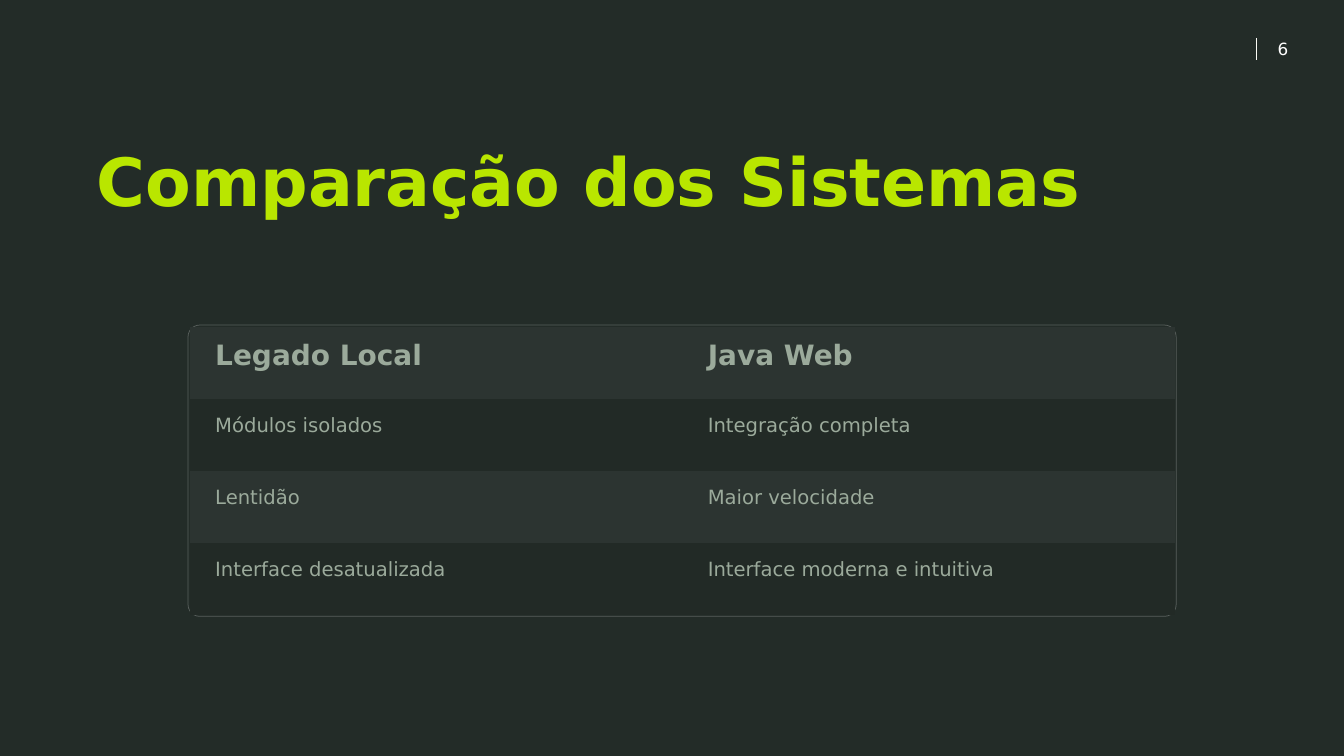
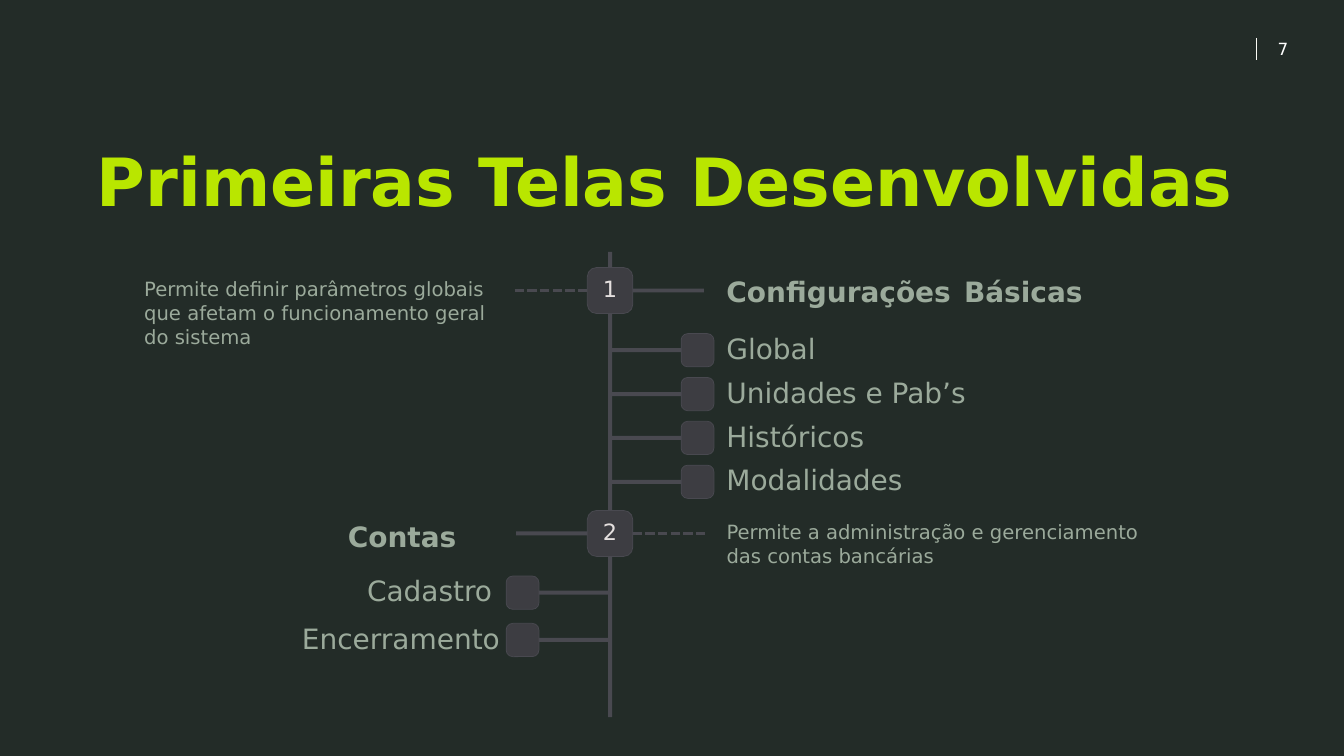
from dataclasses import dataclass

from lxml.etree import SubElement
from pptx import Presentation
from pptx.dml.color import RGBColor as Rgb
from pptx.enum.dml import MSO_LINE as Dash
from pptx.enum.shapes import MSO_CONNECTOR as Link, MSO_SHAPE as Preset
from pptx.enum.text import MSO_ANCHOR as Anchor, MSO_AUTO_SIZE as Fit, PP_ALIGN as Align
from pptx.oxml.ns import qn
from pptx.util import Inches, Pt

FONT = "DejaVu Sans"
COLORS = {
    "background": "232C28", "title": "B9E600", "text": "9BAA9B",
    "page": "FFFFFF", "page_bar": "FAFAF5", "outline": "FFFFFF",
    "light_row": "2C3431", "dark_row": "222A26",
    "branch": "494950", "badge": "3D3D42", "badge_text": "E5E0DF",
}
NO_GRID_STYLE = "{2D5ABB26-0587-4C30-8999-92F81FD0307C}"

# The slide is a grid of 100 columns by 100 rows
SLIDE_W, SLIDE_H = Inches(26.66), Inches(15)
COL, ROW = SLIDE_W / 100, SLIDE_H / 100

# Timeline parts, in columns and rows
BADGE_W, BADGE_H = 3.38, 6.07
DOT_W, DOT_H = 2.44, 4.4
ARM_W, ARM_H = 5.29, 0.53
RAIL_W = 0.3
LABEL_H = 4.2
RIGHT, LEFT = 1, -1


@dataclass
class Box:
    """An area in columns and rows."""
    x: float
    y: float
    w: float
    h: float

    def sub(self, x, y, w, h):
        return Box(self.x + x, self.y + y, w, h)

    def emu(self):
        return (round(self.x * COL), round(self.y * ROW),
                round(self.w * COL), round(self.h * ROW))


def rgb(name):
    return Rgb.from_string(COLORS[name])


def write(frame, text, *, size, color="text", bold=False, align=Align.LEFT,
          spacing=None, wrap=None, anchor=None, inset=None):
    """Fill a frame; text is a string or a list of (string, size) runs."""
    if wrap is not None:
        frame.word_wrap = wrap
        frame.auto_size = Fit.NONE
    if anchor is not None:
        frame.vertical_anchor = anchor
    if inset is not None:
        frame.margin_left = frame.margin_right = Inches(inset)
        frame.margin_top = frame.margin_bottom = Inches(inset)
    line = frame.paragraphs[0]
    line.alignment = align
    line.space_before = Pt(0)
    if spacing:
        line.line_spacing = spacing
    for words, points in [(text, size)] if isinstance(text, str) else text:
        run = line.add_run()
        run.text = words
        run.font.name, run.font.size, run.font.bold = FONT, Pt(points), bold
        run.font.color.rgb = rgb(color)


def add_text(slide, box, text, **fmt):
    frame = slide.shapes.add_textbox(*box.emu()).text_frame
    write(frame, text, **{"wrap": False, **fmt})


def fill_placeholder(holder, box, text, **fmt):
    holder.left, holder.top, holder.width, holder.height = box.emu()
    write(holder.text_frame, text, spacing=1.02, wrap=True,
          anchor=Anchor.TOP, inset=0.1, **fmt)


def add_block(slide, box, fill=None, line=None, preset=Preset.RECTANGLE, corner=None):
    block = slide.shapes.add_shape(preset, *box.emu())
    block.shadow.inherit = False
    if corner is not None:
        block.adjustments[0] = corner
    if fill:
        block.fill.solid()
        block.fill.fore_color.rgb = rgb(fill)
    else:
        block.fill.background()
    if line:
        block.line.color.rgb = rgb(line)
        block.line.width = Pt(1.09)
    else:
        block.line.fill.background()
    return block


def add_line(slide, x1, y1, x2, y2, color, width, dash=None):
    ends = [round(n) for n in (x1 * COL, y1 * ROW, x2 * COL, y2 * ROW)]
    line = slide.shapes.add_connector(Link.STRAIGHT, *ends)
    line.line.color.rgb = rgb(color)
    line.line.width = Pt(width)
    if dash:
        line.line.dash_style = dash
    SubElement(line._element.spPr, qn("a:effectLst"))


def page_mark(slide, box, number):
    add_text(slide, box, str(number), size=24, color="page",
             align=Align.RIGHT, wrap=True)
    bar = box.x + 2.44
    add_line(slide, bar, box.y + 0.2, bar, box.y + 3.2, "page_bar", 2)


def start_slide(prs, layout, title, title_box, number):
    slide = prs.slides.add_slide(prs.slide_layouts[layout])
    page_mark(slide, Box(91.04, 4.8, 5.18, 4.13), number)
    fill_placeholder(slide.shapes.title, title_box, title,
                     size=95, color="title", bold=True)
    return slide


def comparison_table(slide, box, rows):
    # Rounded, faint outline around the table
    outline = add_block(slide, box, line="outline",
                        preset=Preset.ROUNDED_RECTANGLE, corner=0.04)
    tint = outline._element.spPr.find(qn("a:ln")).find(".//" + qn("a:srgbClr"))
    SubElement(tint, qn("a:alpha")).set("val", "24000")

    # Banded rows
    inner = box.sub(0.11, 0.2, box.w - 0.22, box.h - 0.4)
    table = slide.shapes.add_table(len(rows), len(rows[0]), *inner.emu()).table
    table._tbl.tblPr.find(qn("a:tableStyleId")).text = NO_GRID_STYLE
    table.horz_banding = False
    for r, row in enumerate(rows):
        header = r == 0
        for c, words in enumerate(row):
            cell = table.cell(r, c)
            cell.fill.solid()
            cell.fill.fore_color.rgb = rgb("dark_row" if r % 2 else "light_row")
            cell.margin_left = Inches(0.51)
            cell.margin_top = Inches(0.05 if header else 0.37)
            cell.vertical_anchor = Anchor.MIDDLE if header else Anchor.TOP
            write(cell.text_frame, words, size=40 if header else 28,
                  bold=header, spacing=Pt(28))


def branch_box(box, rail, side, near, y, w, h):
    """A box that starts `near` columns from the rail, on the given side."""
    return box.sub(rail + near if side == RIGHT else rail - near - w, y, w, h)


def add_note(holder, box, text):
    fill_placeholder(holder, box, text, size=28)
    layout = holder.text_frame.paragraphs[0]._p.get_or_add_pPr()
    layout.set("marL", "0")
    layout.set("indent", "0")
    SubElement(layout, qn("a:buNone"))


def timeline_stage(slide, box, rail, stage, number, holder):
    side, y = stage["side"], stage["y"]

    # Arm to the heading, dashes to the note
    add_block(slide, branch_box(box, rail, side, BADGE_W / 2, y - ARM_H / 2,
                                ARM_W, ARM_H), fill="branch")
    dash_y = box.y + y
    edge = box.x + rail - side * BADGE_W / 2
    ends = sorted((edge, edge - side * 5.4))
    add_line(slide, ends[0], dash_y, ends[1], dash_y, "branch", 4.5, Dash.SQUARE_DOT)

    # Numbered badge
    badge = add_block(slide, box.sub(rail - BADGE_W / 2, y - BADGE_H / 2, BADGE_W, BADGE_H),
                      "badge", "branch", Preset.ROUNDED_RECTANGLE, 0.2)
    write(badge.text_frame, str(number), size=32, color="badge_text",
          align=Align.CENTER, spacing=Pt(32.8), wrap=False, anchor=Anchor.MIDDLE)

    # Heading and note
    near, width = stage["heading_span"]
    add_text(slide, branch_box(box, rail, side, near, y - 0.27, width, LABEL_H),
             stage["heading"], size=40, bold=True, spacing=Pt(27.3))
    near, width, height = stage["note_span"]
    add_note(holder, branch_box(box, rail, -side, near, y - 2.5, width, height),
             stage["note"])

    # Screens of this stage
    for i, (screen, width) in enumerate(stage["screens"]):
        mid = stage["first"] + i * stage["step"]
        add_block(slide, branch_box(box, rail, side, 0, mid - ARM_H / 2, ARM_W, ARM_H),
                  fill="branch")
        add_block(slide, branch_box(box, rail, side, ARM_W, mid - DOT_H / 2, DOT_W, DOT_H),
                  "badge", "branch", Preset.ROUNDED_RECTANGLE, 0.2)
        add_text(slide, branch_box(box, rail, side, stage["label_near"], mid - 0.9,
                                   width, LABEL_H),
                 screen, size=40, spacing=Pt(27.3))


def timeline(slide, box, stages):
    rail = 35.04
    add_block(slide, box.sub(rail - RAIL_W / 2, 0, RAIL_W, box.h), fill="branch")
    holders = list(slide.placeholders)[1:]
    for number, (stage, holder) in enumerate(zip(stages, holders), 1):
        timeline_stage(slide, box, rail, stage, number, holder)


def comparison_slide(prs):
    slide = start_slide(prs, 5, "Comparação dos Sistemas",
                        Box(6.83, 17.67, 78.43, 22.33), 6)
    comparison_table(slide, Box(13.99, 43, 73.52, 38.53), [
        ("Legado Local", "Java Web"),
        ("Módulos isolados", "Integração completa"),
        ("Lentidão", "Maior velocidade"),
        ("Interface desatualizada", "Interface moderna e intuitiva"),
    ])


def screens_slide(prs):
    slide = start_slide(prs, 3, "Primeiras Telas Desenvolvidas",
                        Box(6.83, 17.67, 89.8, 12.33), 7)
    right_screens = ("Global", "Unidades e Pab’s", "Históricos", "Modalidades")
    timeline(slide, Box(10.35, 33.33, 80.8, 61.53), [
        {"side": RIGHT, "y": 5.1, "first": 13, "step": 5.8, "label_near": 8.29,
         "heading": [("Configurações", 40), (" ", 54), ("Básicas", 40)],
         "heading_span": (8.29, 35.97),
         "note": "Permite definir parâmetros globais que afetam o "
                 "funcionamento geral do sistema",
         "note_span": (7.28, 27.76, 10.93),
         "screens": [(screen, 22.21) for screen in right_screens]},
        {"side": LEFT, "y": 37.23, "first": 45.07, "step": 6.26, "label_near": 8.7,
         "heading": "Contas",
         "heading_span": (7.65, 12.23),
         "note": "Permite a administração e gerenciamento das contas bancárias",
         "note_span": (8.29, 31.47, 7.73),
         "screens": [("Cadastro", 9.75), ("Encerramento", 14.59)]},
    ])


def main():
    prs = Presentation()
    prs.slide_width, prs.slide_height = SLIDE_W, SLIDE_H
    backdrop = prs.slide_master.background.fill
    backdrop.solid()
    backdrop.fore_color.rgb = rgb("background")
    comparison_slide(prs)
    screens_slide(prs)
    prs.save("out.pptx")


if __name__ == "__main__":
    main()
